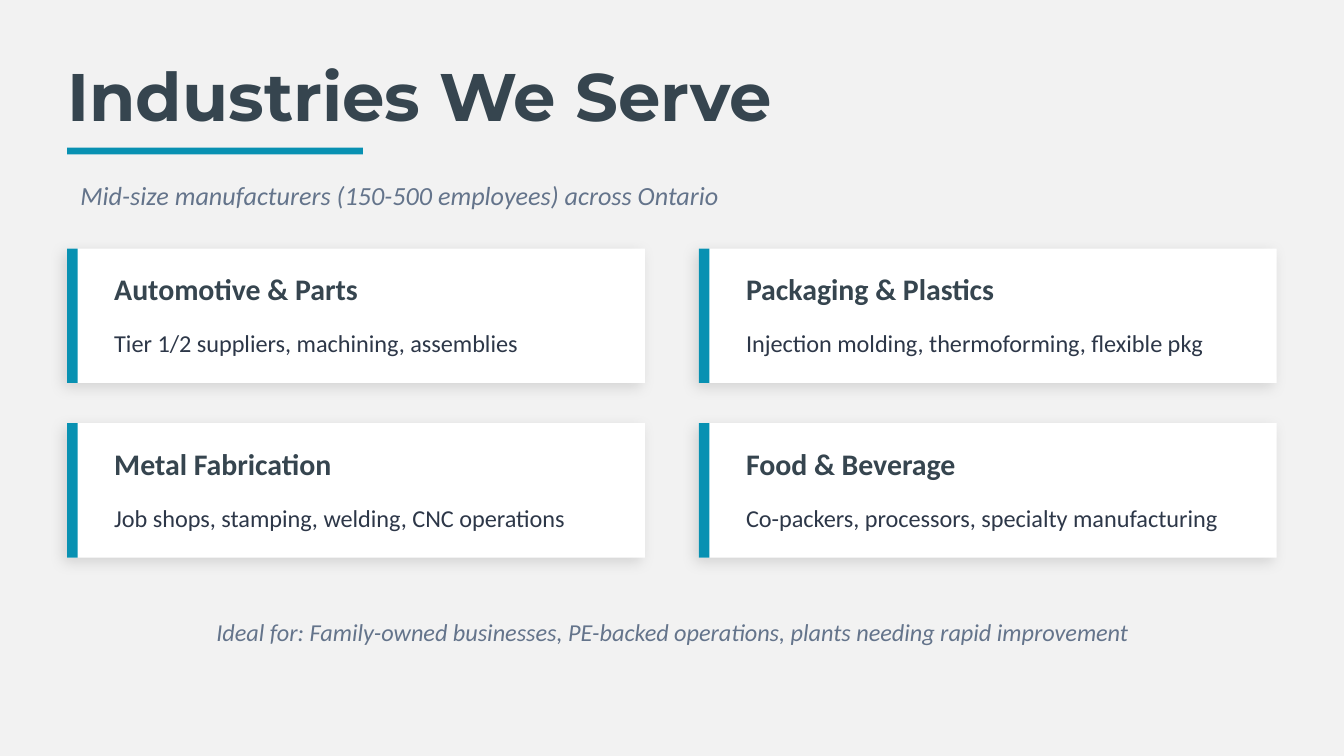
from lxml.etree import SubElement
from pptx import Presentation
from pptx.dml.color import RGBColor
from pptx.enum.shapes import MSO_SHAPE
from pptx.enum.text import MSO_ANCHOR, MSO_AUTO_SIZE, PP_ALIGN
from pptx.oxml.ns import qn
from pptx.util import Cm, Pt

COLORS = {
    "background": "F2F2F2",
    "heading": "36454F",
    "accent": "0891B2",
    "muted": "64748B",
    "body": "2D3748",
    "card": "FFFFFF",
    "shadow": "000000",
}
INDUSTRIES = [
    ("Automotive & Parts", "Tier 1/2 suppliers, machining, assemblies"),
    ("Packaging & Plastics", "Injection molding, thermoforming, flexible pkg"),
    ("Metal Fabrication", "Job shops, stamping, welding, CNC operations"),
    ("Food & Beverage", "Co-packers, processors, specialty manufacturing"),
]
MARGIN, CONTENT_W = 1.27, 22.86
CARD_TOP, CARD_W, CARD_H = 4.7, 10.92, 2.54
COL_STEP, ROW_STEP = 11.94, 3.3


def rgb(name):
    return RGBColor.from_string(COLORS[name])


def write(tf, text, size=13, color="body", font="Calibri", bold=False,
          italic=False, align=PP_ALIGN.LEFT, inset=None):
    tf.word_wrap = True
    tf.auto_size = MSO_AUTO_SIZE.NONE
    tf.vertical_anchor = MSO_ANCHOR.MIDDLE
    if inset is not None:
        tf.margin_left = tf.margin_right = Cm(inset)
        tf.margin_top = tf.margin_bottom = Cm(inset)
    p = tf.paragraphs[0]
    p.alignment = align
    r = p.add_run()
    r.text = text
    r.font.name = font
    r.font.size = Pt(size)
    r.font.bold = bold
    r.font.italic = italic
    r.font.color.rgb = rgb(color)


class SlideBuilder:
    def __init__(self, prs):
        self.s = prs.slides.add_slide(prs.slide_layouts[5])
        fill = self.s.background.fill
        fill.solid()
        fill.fore_color.rgb = rgb("background")

    def title(self, text, x, y, w, h):
        sp = self.s.shapes.title
        sp.left, sp.top, sp.width, sp.height = Cm(x), Cm(y), Cm(w), Cm(h)
        write(sp.text_frame, text, size=36, color="heading",
              font="Montserrat", bold=True, inset=0)

    def text(self, text, x, y, w, h, **style):
        sp = self.s.shapes.add_textbox(Cm(x), Cm(y), Cm(w), Cm(h))
        write(sp.text_frame, text, **style)

    def rect(self, x, y, w, h, color):
        sp = self.s.shapes.add_shape(MSO_SHAPE.RECTANGLE, Cm(x), Cm(y), Cm(w), Cm(h))
        sp.shadow.inherit = False
        sp.fill.solid()
        sp.fill.fore_color.rgb = rgb(color)
        sp.line.fill.background()
        return sp

    def add_shadow(self, sp):
        effects = sp._element.spPr.find(qn("a:effectLst"))
        shadow = SubElement(effects, qn("a:outerShdw"), blurRad=str(Pt(8)),
                            dist=str(Pt(3)), dir=str(135 * 60000),
                            algn="bl", rotWithShape="0")
        color = SubElement(shadow, qn("a:srgbClr"), val=COLORS["shadow"])
        SubElement(color, qn("a:alpha"), val="12000")

    def card(self, x, y, heading, detail):
        self.add_shadow(self.rect(x, y, CARD_W, CARD_H, "card"))
        self.rect(x, y, 0.2, CARD_H, "accent")
        self.text(heading, x + 0.64, y + 0.38, 9.91, 0.76,
                  size=16, color="heading", bold=True)
        self.text(detail, x + 0.64, y + 1.27, 9.91, 1.02)


def main():
    prs = Presentation()
    prs.slide_width, prs.slide_height = Cm(25.4), Cm(14.29)
    slide = SlideBuilder(prs)
    slide.title("Industries We Serve", MARGIN, 1.02, CONTENT_W, 1.52)
    slide.rect(MARGIN, 2.79, 5.59, 0.13, "accent")
    slide.text("Mid-size manufacturers (150-500 employees) across Ontario",
               MARGIN, 3.3, CONTENT_W, 0.76, size=14, color="muted", italic=True)
    for i, (heading, detail) in enumerate(INDUSTRIES):
        row, col = divmod(i, 2)
        slide.card(MARGIN + col * COL_STEP, CARD_TOP + row * ROW_STEP, heading, detail)
    slide.text("Ideal for: Family-owned businesses, PE-backed operations, "
               "plants needing rapid improvement",
               MARGIN, 11.43, CONTENT_W, 1.02, color="muted", italic=True,
               align=PP_ALIGN.CENTER)
    prs.save("out.pptx")


if __name__ == "__main__":
    main()
